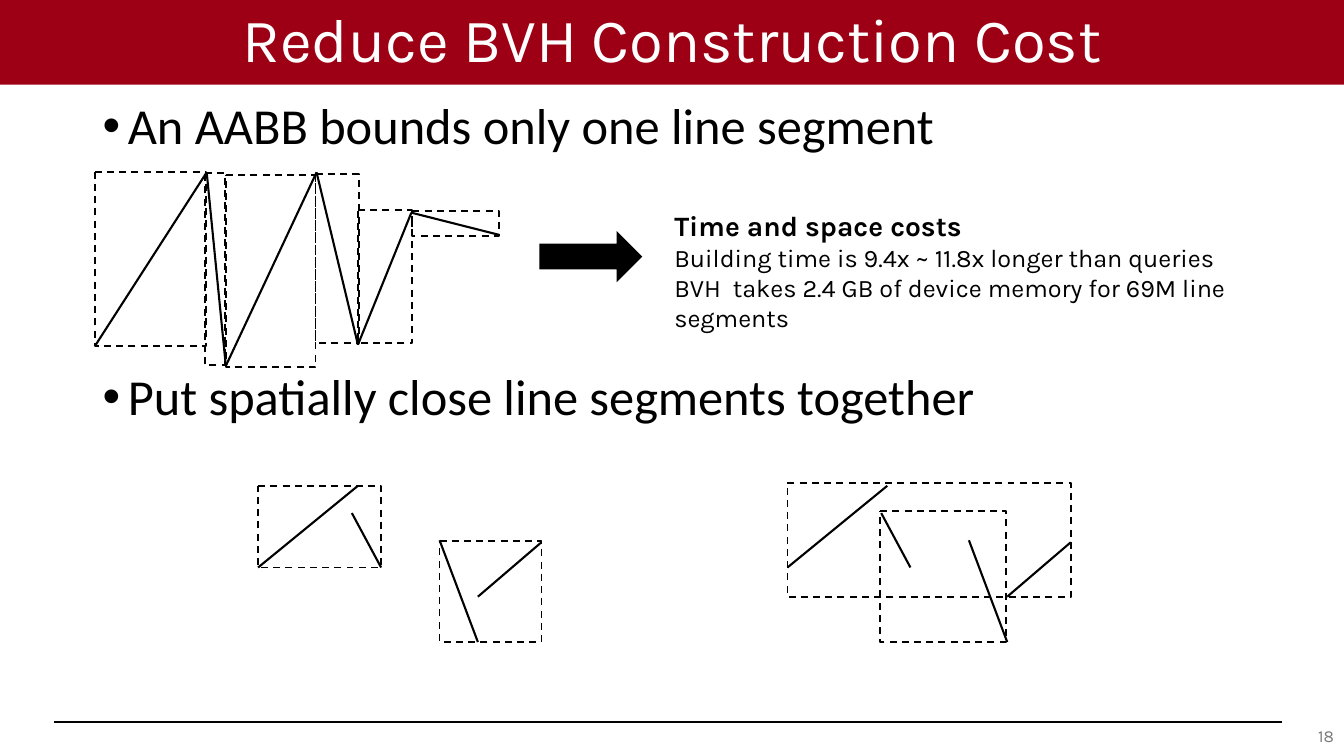
from itertools import pairwise

from lxml.etree import SubElement
from pptx import Presentation
from pptx.dml.color import RGBColor
from pptx.enum.dml import MSO_LINE
from pptx.enum.shapes import MSO_CONNECTOR, MSO_SHAPE
from pptx.enum.text import MSO_ANCHOR, MSO_AUTO_SIZE, PP_ALIGN
from pptx.oxml.ns import qn
from pptx.util import Pt

PX = 9144
COLORS = {"band": "9D0014", "ink": "000000", "title": "FFFFFF", "number": "797979"}


class SlideBuilder:
    """Draws styled elements on one slide, with lengths in px of 1/100 inch."""

    def __init__(self, slide):
        self.slide = slide
        self.shapes = slide.shapes

    def color(self, key):
        return RGBColor.from_string(COLORS[key])

    def run(self, paragraph, words, size, font="Karla", color="ink", bold=False):
        run = paragraph.add_run()
        run.text = words
        run.font.name = font
        run.font.size = Pt(size)
        run.font.bold = bold
        run.font.color.rgb = self.color(color)

    def title(self, words, left, top, width, height):
        title = self.shapes.title
        title.left, title.top, title.width, title.height = (
            n * PX for n in (left, top, width, height))
        frame = title.text_frame
        frame.auto_size = MSO_AUTO_SIZE.NONE
        frame.vertical_anchor = MSO_ANCHOR.MIDDLE
        heading = frame.paragraphs[0]
        heading.alignment = PP_ALIGN.CENTER
        heading.line_spacing = 0.9
        self.run(heading, words, 44, color="title")

    def text_frame(self, left, top, width, height, anchor=MSO_ANCHOR.TOP):
        box = self.shapes.add_textbox(left * PX, top * PX, width * PX, height * PX)
        box.text_frame.word_wrap = True
        box.text_frame.vertical_anchor = anchor
        return box.text_frame

    def paragraph(self, frame, index):
        return frame.add_paragraph() if index else frame.paragraphs[0]

    def bullets(self, lines, left, top, width, height, gap):
        frame = self.text_frame(left, top, width, height)
        for index, words in enumerate(lines):
            point = self.paragraph(frame, index)
            properties = point._p.get_or_add_pPr()
            properties.set("marL", str(25 * PX))
            properties.set("indent", str(-25 * PX))
            SubElement(properties, qn("a:buFont")).set("typeface", "Arial")
            SubElement(properties, qn("a:buChar")).set("char", "•")
            point.line_spacing = 0.9
            if index:
                point.space_before = Pt(gap)
            self.run(point, words, 36, "Calibri")

    def costs(self, heading, facts, left, top, width, height):
        frame = self.text_frame(left, top, width, height)
        self.run(frame.paragraphs[0], heading, 20, bold=True)
        for fact in facts:
            self.run(frame.add_paragraph(), fact, 18)

    def page_number(self, number, left, top, width, height):
        frame = self.text_frame(left, top, width, height, MSO_ANCHOR.MIDDLE)
        frame.paragraphs[0].alignment = PP_ALIGN.RIGHT
        self.run(frame.paragraphs[0], number, 12, color="number")

    def solid(self, kind, color, left, top, width, height):
        shape = self.shapes.add_shape(kind, left * PX, top * PX, width * PX, height * PX)
        shape.shadow.inherit = False
        shape.fill.solid()
        shape.fill.fore_color.rgb = self.color(color)
        shape.line.fill.background()
        return shape

    def band(self, left, top, width, height):
        band = self.solid(MSO_SHAPE.RECTANGLE, "band", left, top, width, height)
        self.shapes.title._element.addprevious(band._element)

    def bounds(self, left, top, width, height):
        box = self.shapes.add_shape(MSO_SHAPE.FLOWCHART_PROCESS,
                                    left * PX, top * PX, width * PX, height * PX)
        box.shadow.inherit = False
        box.fill.background()
        box.line.color.rgb = self.color("ink")
        box.line.width = Pt(1.25)
        box.line.dash_style = MSO_LINE.DASH

    def segment(self, start, end):
        ends = [n * PX for n in (*start, *end)]
        line = self.shapes.add_connector(MSO_CONNECTOR.STRAIGHT, *ends)
        line.line.color.rgb = self.color("ink")
        line.line.width = Pt(1.5)
        SubElement(line._element.spPr, qn("a:effectLst"))

    def cluster(self, left, top, segments, boxes):
        for x, y, width, height in boxes:
            self.bounds(left + x, top + y, width, height)
        for x1, y1, x2, y2 in segments:
            self.segment((left + x1, top + y1), (left + x2, top + y2))


def main():
    deck = Presentation()
    deck.slide_width, deck.slide_height = 1333 * PX, 750 * PX
    builder = SlideBuilder(deck.slides.add_slide(deck.slide_layouts[5]))

    builder.band(0, 0, 1333, 84)
    builder.title("Reduce BVH Construction Cost", 92, 0, 1150, 84)
    builder.segment((54, 716), (1272, 716))
    builder.bullets(["An AABB bounds only one line segment",
                     "Put spatially close line segments together"],
                    92, 95, 1150, 580, gap=155)
    builder.page_number("18", 1286, 710, 47, 40)

    polyline = [(95, 342), (205, 171), (224, 363), (314, 171),
                (355, 342), (408, 211), (495, 233)]
    for start, end in pairwise(polyline):
        builder.segment(start, end)
    segment_boxes = [(94, 171, 110, 172), (203, 172, 20, 190), (224, 174, 89, 190),
                     (313, 173, 43, 167), (355, 208, 54, 132), (409, 209, 86, 25)]
    for box in segment_boxes:
        builder.bounds(*box)

    builder.solid(MSO_SHAPE.RIGHT_ARROW, "ink", 535, 229, 102, 51)
    builder.costs("Time and space costs",
                  ["Building time is 9.4x ~ 11.8x longer than queries",
                   "BVH  takes 2.4 GB of device memory for 69M line segments"],
                  659, 202, 674, 104)

    segments = [(0, 81, 99, 0), (93, 27, 122, 81),
                (180, 54, 218, 155), (281, 56, 218, 110)]
    close_boxes = [(0, 0, 122, 81), (180, 55, 101, 100)]
    overlapping_boxes = [(0, -3, 281, 113), (92, 25, 125, 130)]
    builder.cluster(256, 482, segments, close_boxes)
    builder.cluster(781, 482, segments, overlapping_boxes)

    deck.save("out.pptx")


if __name__ == "__main__":
    main()
